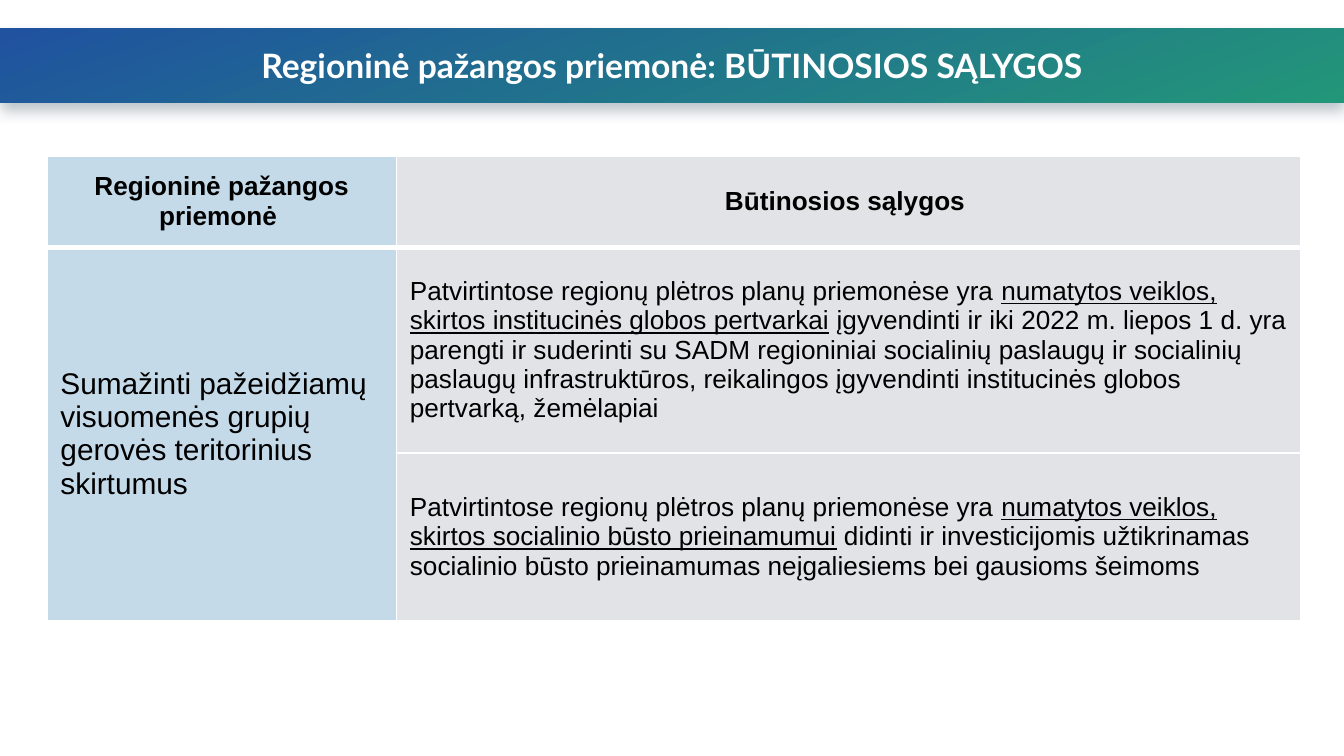
import pptx
import pptx.dml.color
import pptx.enum.shapes
import pptx.enum.text
import pptx.util
from dataclasses import dataclass
from lxml import etree
from pptx.util import Inches

A = "http://schemas.openxmlformats.org/drawingml/2006/main"
ALIGN = pptx.enum.text.PP_ALIGN
MIDDLE = pptx.enum.text.MSO_ANCHOR.MIDDLE


@dataclass(frozen=True)
class Theme:
    blue: str = "2052A0"
    green: str = "229678"
    shadow: str = "1F3B50"
    measure: str = "C5DAE9"
    condition: str = "E2E3E6"
    white: str = "FFFFFF"
    black: str = "000000"
    title_font: str = "Lato"
    body_font: str = "Arial"
    title_size: int = 18
    measure_size: int = 16
    body_size: int = 14


T = Theme()


def rgb(color):
    return pptx.dml.color.RGBColor.from_string(color)


def add_text(p, text, size=T.body_size, font=T.body_font, color=T.black,
             bold=False, underline=False, align=None):
    """Append a formatted run to a paragraph, aligning it if asked."""
    if align is not None:
        p.alignment = align
    r = p.add_run()
    r.text = text
    r.font.size = pptx.util.Pt(size)
    r.font.name = font
    r.font.bold = bold
    r.font.underline = underline
    r.font.color.rgb = rgb(color)


def set_shadow(sp, color, alpha, blur, distance, angle):
    """Give a shape an outer shadow; alpha in percent, lengths in points."""
    sp.shadow.inherit = False
    effects = sp._element.spPr.find(f"{{{A}}}effectLst")
    effects.append(etree.fromstring(
        f'<a:outerShdw xmlns:a="{A}" blurRad="{pptx.util.Pt(blur)}" '
        f'dist="{pptx.util.Pt(distance)}" dir="{angle * 60000}" '
        f'algn="t" rotWithShape="0"><a:srgbClr val="{color}">'
        f'<a:alpha val="{alpha * 1000}"/></a:srgbClr></a:outerShdw>'))


def set_borders(cell, bottom):
    """Draw white cell edges, with the given width in points below."""
    tcPr = cell._tc.get_or_add_tcPr()
    for side, width in (("L", 1), ("R", 1), ("T", 1), ("B", bottom)):
        tcPr.append(etree.fromstring(
            f'<a:ln{side} xmlns:a="{A}" w="{pptx.util.Pt(width)}"><a:solidFill>'
            f'<a:srgbClr val="{T.white}"/></a:solidFill></a:ln{side}>'))


def add_title_band(s, x, y, w, h, title):
    sp = s.shapes.add_shape(pptx.enum.shapes.MSO_SHAPE.RECTANGLE,
                            Inches(x), Inches(y), Inches(w), Inches(h))
    sp.fill.gradient()
    sp.fill.gradient_angle = 290
    for stop, color, position in zip(sp.fill.gradient_stops, (T.blue, T.green), (0, 1)):
        stop.color.rgb = rgb(color)
        stop.position = position
    sp.line.fill.background()
    set_shadow(sp, T.shadow, alpha=30, blur=8, distance=4, angle=90)
    tf = sp.text_frame
    tf.word_wrap = True
    tf.vertical_anchor = MIDDLE
    add_text(tf.paragraphs[0], title, size=T.title_size, font=T.title_font,
             color=T.white, bold=True, align=ALIGN.CENTER)


def add_conditions_table(s, x, y, widths, heights, headers, measure, conditions):
    """Place a header row, then one measure spanning all its conditions."""
    table = s.shapes.add_table(len(heights), len(widths), Inches(x), Inches(y),
                               Inches(sum(widths)), Inches(sum(heights))).table
    table.first_row = table.horz_banding = False
    for column, width in zip(table.columns, widths):
        column.width = Inches(width)
    for i, (row, height) in enumerate(zip(table.rows, heights)):
        row.height = Inches(height)
        for cell, color in zip(row.cells, (T.measure, T.condition)):
            set_borders(cell, bottom=3 if i == 0 else 1)
            cell.fill.solid()
            cell.fill.fore_color.rgb = rgb(color)
            cell.vertical_anchor = MIDDLE

    for cell, header in zip(table.rows[0].cells, headers):
        add_text(cell.text_frame.paragraphs[0], header, bold=True, align=ALIGN.CENTER)
    first = table.cell(1, 0)
    first.merge(table.cell(len(conditions), 0))
    add_text(first.text_frame.paragraphs[0], measure, size=T.measure_size)
    for i, (key, rest) in enumerate(conditions, 1):
        p = table.cell(i, 1).text_frame.paragraphs[0]
        add_text(p, "Patvirtintose regionų plėtros planų priemonėse yra ")
        add_text(p, key, underline=True)
        add_text(p, rest)


def main():
    prs = pptx.Presentation()
    prs.slide_width = Inches(10)
    prs.slide_height = prs.slide_width * 9 // 16
    s = prs.slides.add_slide(prs.slide_layouts[6])
    add_title_band(s, 0, 0.21, 10, 0.55,
                   "Regioninė pažangos priemonė: BŪTINOSIOS SĄLYGOS")
    add_conditions_table(
        s, 0.35, 1.16, widths=(2.6, 6.73), heights=(0.68, 1.53, 1.25),
        headers=("Regioninė pažangos priemonė ", "Būtinosios sąlygos "),
        measure="Sumažinti pažeidžiamų visuomenės grupių gerovės teritorinius skirtumus",
        conditions=(
            ("numatytos veiklos, skirtos institucinės globos pertvarkai",
             " įgyvendinti ir iki 2022 m. liepos 1 d. yra parengti ir suderinti su SADM "
             "regioniniai socialinių paslaugų ir socialinių paslaugų infrastruktūros, "
             "reikalingos įgyvendinti institucinės globos pertvarką, žemėlapiai"),
            ("numatytos veiklos, skirtos socialinio būsto prieinamumui",
             " didinti ir investicijomis užtikrinamas socialinio būsto prieinamumas "
             "neįgaliesiems bei gausioms šeimoms"),
        ))
    prs.save("out.pptx")


if __name__ == "__main__":
    main()
